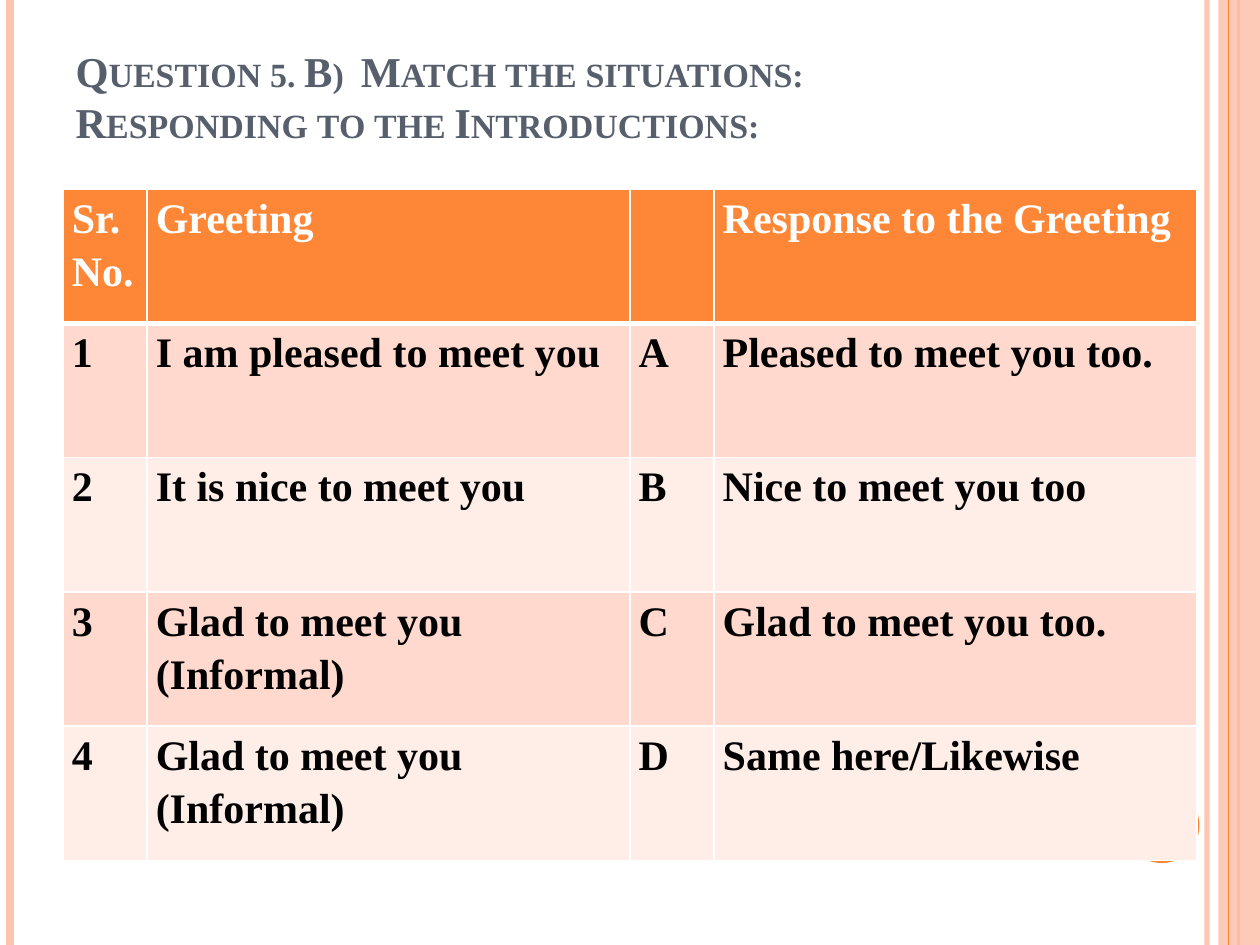
from lxml import etree
from pptx import Presentation
from pptx.dml.color import RGBColor
from pptx.enum.shapes import MSO_CONNECTOR, MSO_SHAPE
from pptx.enum.text import MSO_ANCHOR, MSO_AUTO_SIZE, PP_ALIGN
from pptx.oxml.ns import qn
from pptx.util import Inches, Pt

STRAIGHT = MSO_CONNECTOR.STRAIGHT
RECT, OVAL = MSO_SHAPE.RECTANGLE, MSO_SHAPE.OVAL
BOTTOM, TOP, LEFT = MSO_ANCHOR.BOTTOM, MSO_ANCHOR.TOP, PP_ALIGN.LEFT
NO_FIT = MSO_AUTO_SIZE.NONE
PINK, ORANGE, SLATE = "FEC3AE", "FE8637", "575F6D"
WHITE, BLACK = "FFFFFF", "000000"
BANDS = ["FFD9CE", "FFEDE8"]


def paint(fmt, color, alpha=100):
    fmt.solid()
    fmt.fore_color.rgb = RGBColor.from_string(color)
    if alpha < 100:
        clr = fmt._xPr.find(qn("a:solidFill"))[0]
        etree.SubElement(clr, qn("a:alpha"), val=str(alpha * 1000))


def style(p, text, size, color):
    p.alignment = LEFT
    r = p.add_run()
    r.text = text
    for key, value in {"name": "Times New Roman", "size": Pt(size), "bold": True}.items():
        setattr(r.font, key, value)
    paint(r.font.fill, color)
    return r


prs = Presentation()
prs.slide_width, prs.slide_height = Inches(10), Inches(7.5)
W, H = prs.slide_width, prs.slide_height
s = prs.slides.add_slide(prs.slide_layouts[5])
paint(s.background.fill, WHITE)

rules = [(9.58, PINK, 3, 93), (0.08, PINK, 4.5, 100), (9.83, ORANGE, 1.5, 100),
         (9.75, ORANGE, 0.75, 100)]
panels = [(RECT, 9.67, 0, 0.33, 7.5, PINK, 87), (OVAL, 8.92, 6.25, 0.6, 0.6, ORANGE, 100)]

for i, (x, color, width, alpha) in enumerate(rules):
    if i == 3:
        for kind, left, top, w, h, fill, opacity in panels:
            sp = s.shapes.add_shape(kind, *map(Inches, (left, top, w, h)))
            sp.shadow.inherit = False
            paint(sp.fill, fill, opacity)
            sp.line.fill.background()
    cx = s.shapes.add_connector(STRAIGHT, Inches(x), 0, Inches(x), H)
    cx.line.width = Pt(width)
    paint(cx.line.fill, color, alpha)
    etree.SubElement(cx._element.spPr, qn("a:effectLst"))

title = s.shapes.title
title.left, title.top, title.width, title.height = map(Inches, (0.5, 0.33, 9, 1.33))
tf = title.text_frame
for key, value in {"word_wrap": True, "auto_size": NO_FIT, "vertical_anchor": BOTTOM,
                   "margin_left": Inches(0.1), "margin_bottom": Inches(0.49)}.items():
    setattr(tf, key, value)
lines = ["Question 5. B)  Match the situations:", "Responding to the Introductions:"]
for i, text in enumerate(lines):
    p = tf.add_paragraph() if i else tf.paragraphs[0]
    p.space_before = Pt(0)
    r = style(p, text, 24.3, SLATE)
    r.font._element.set("cap", "small")

rows = [
    ["Sr. No.", "Greeting", "", "Response to the Greeting"],
    ["1", "I am pleased to meet you", "A", "Pleased to meet you too."],
    ["2", "It is nice to meet you", "B", "Nice to meet you too"],
    ["3", "Glad to meet you (Informal)", "C", "Glad to meet you too."],
    ["4", "Glad to meet you (Informal)", "D", "Same here/Likewise"],
]
unit = W * 0.9 / 27
table = s.shapes.add_table(len(rows), 4, int(W * 0.05), int(H * 0.2),
                           int(W * 0.9), Inches(5.33)).table
for col, share in zip(table.columns, (2, 11.5, 2, 11.5)):
    col.width = int(unit * share)

for i, row in enumerate(rows):
    table.rows[i].height = int(Inches(5.33) / len(rows))
    for j, text in enumerate(row):
        cell = table.cell(i, j)
        for key, value in {"margin_left": Inches(0.07), "margin_right": Inches(0.07),
                           "margin_top": 0, "margin_bottom": 0,
                           "vertical_anchor": TOP}.items():
            setattr(cell, key, value)
        tcPr = cell._tc.get_or_add_tcPr()
        for side in "LRTB":
            thick = (i, side) in [(0, "B"), (1, "T")]
            ln = etree.SubElement(tcPr, qn("a:ln" + side), w=str(Pt(3 if thick else 1)))
            fill = etree.SubElement(ln, qn("a:solidFill"))
            etree.SubElement(fill, qn("a:srgbClr"), val=WHITE)
        paint(cell.fill, BANDS[(i - 1) % 2] if i else ORANGE)
        if text:
            p = cell.text_frame.paragraphs[0]
            p.line_spacing = 1.15
            style(p, text, 24, BLACK if i else WHITE)

prs.save("out.pptx")
